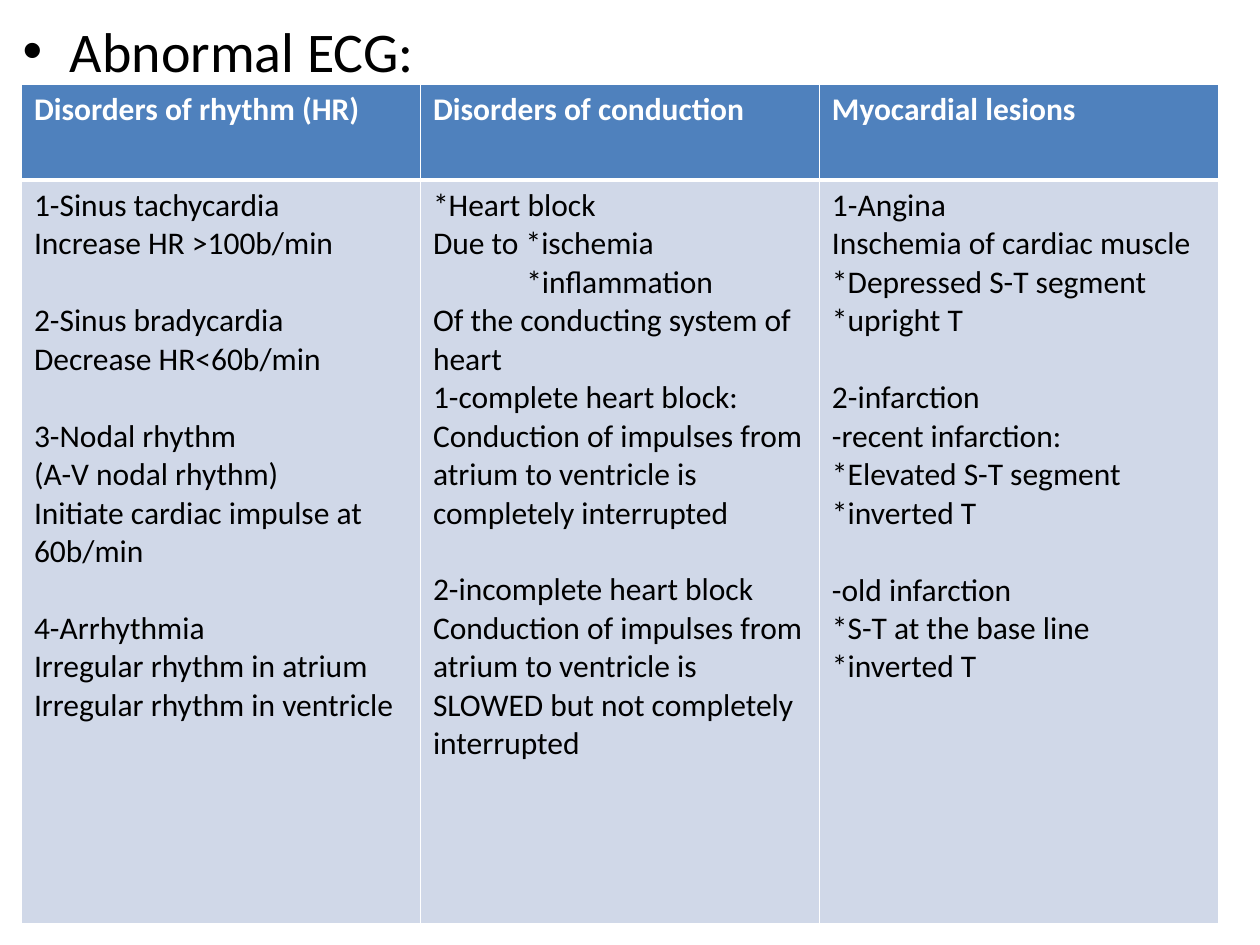
from dataclasses import dataclass

from lxml.etree import SubElement
from pptx import Presentation
from pptx.dml.color import RGBColor
from pptx.oxml.ns import qn
from pptx.util import Inches, Pt

COLORS = {"text": "000000", "white": "FFFFFF", "header": "4F81BD", "body": "D0D8E8"}
FONT = "Calibri"
TABLE_SIZE = 18
GROUP_GAP = Pt(22)
CAUSE_INDENT = Inches(0.74)


@dataclass
class Column:
    heading: str
    groups: list[list[str]]


COLUMNS = [
    Column("Disorders of rhythm (HR)", [
        ["1-Sinus tachycardia", "Increase HR >100b/min"],
        ["2-Sinus bradycardia", "Decrease HR<60b/min"],
        ["3-Nodal rhythm", "(A-V nodal rhythm)",
         "Initiate cardiac impulse at 60b/min"],
        ["4-Arrhythmia", "Irregular rhythm in atrium",
         "Irregular rhythm in ventricle"],
    ]),
    Column("Disorders of conduction", [
        ["*Heart block", "Due to *ischemia", "*inflammation",
         "Of the conducting system of heart", "1-complete heart block:",
         "Conduction of impulses from atrium to ventricle is completely interrupted"],
        ["2-incomplete heart block",
         "Conduction of impulses from atrium to ventricle is SLOWED "
         "but not completely interrupted"],
    ]),
    Column("Myocardial lesions", [
        ["1-Angina", "Inschemia of cardiac muscle", "*Depressed S-T segment",
         "*upright T"],
        ["2-infarction", "-recent infarction:", "*Elevated S-T segment",
         "*inverted T"],
        ["-old infarction", "*S-T at the base line", "*inverted T"],
    ]),
]


def add_run(p, text: str, size: float, color: str, bold: bool = False) -> None:
    r = p.add_run()
    r.text = text
    r.font.name = FONT
    r.font.size = Pt(size)
    r.font.bold = bold
    r.font.color.rgb = RGBColor.from_string(COLORS[color])


def style_cell(cell, fill: str, top: float, bottom: float) -> None:
    """Fill the cell and give it white borders; widths are in points."""
    tc_pr = cell._tc.get_or_add_tcPr()
    for side, width in (("L", 1), ("R", 1), ("T", top), ("B", bottom)):
        line = SubElement(tc_pr, qn(f"a:ln{side}"), w=str(Pt(width)))
        solid = SubElement(line, qn("a:solidFill"))
        SubElement(solid, qn("a:srgbClr"), val=COLORS["white"])
    cell.fill.solid()
    cell.fill.fore_color.rgb = RGBColor.from_string(COLORS[fill])


def write_groups(cell, groups: list[list[str]]) -> None:
    """Write one paragraph per line, with a gap before each later group."""
    tf = cell.text_frame
    for g, lines in enumerate(groups):
        for i, text in enumerate(lines):
            p = tf.paragraphs[0] if g == i == 0 else tf.add_paragraph()
            if g and i == 0:
                p.space_before = GROUP_GAP
            if text == "*inflammation":
                p._p.get_or_add_pPr().set("marL", str(CAUSE_INDENT))
            add_run(p, text, TABLE_SIZE, "text")


def add_disorder_table(s, columns: list[Column]) -> None:
    table = s.shapes.add_table(2, len(columns), Inches(0.17), Inches(0.67),
                               Inches(9.5), Inches(6.66)).table
    table.rows[0].height = Inches(0.76)
    table.rows[1].height = Inches(5.9)
    for i, column in enumerate(columns):
        head, body = table.cell(0, i), table.cell(1, i)
        style_cell(head, "header", 1, 3)
        style_cell(body, "body", 3, 1)
        add_run(head.text_frame.paragraphs[0], column.heading, TABLE_SIZE,
                "white", bold=True)
        write_groups(body, column.groups)


def main() -> None:
    prs = Presentation()
    prs.slide_width, prs.slide_height = Inches(10), Inches(7.5)
    s = prs.slides.add_slide(prs.slide_layouts[1])
    title = s.shapes.title
    title.element.getparent().remove(title.element)

    body = s.placeholders[1]
    body.left, body.top = Inches(0.08), Inches(0.08)
    body.width, body.height = Inches(9.83), Inches(7.25)
    add_run(body.text_frame.paragraphs[0], "Abnormal ECG:", 32, "text")

    add_disorder_table(s, COLUMNS)
    prs.save("out.pptx")


if __name__ == "__main__":
    main()
